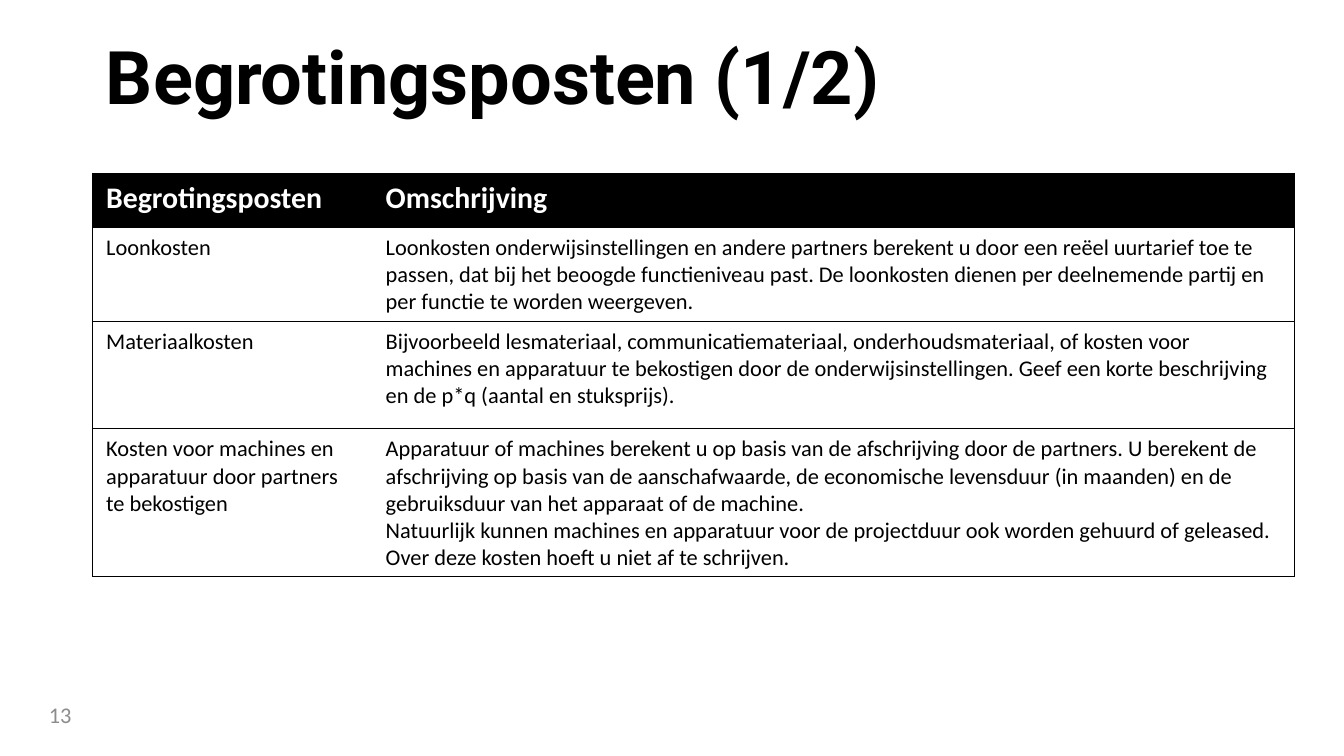
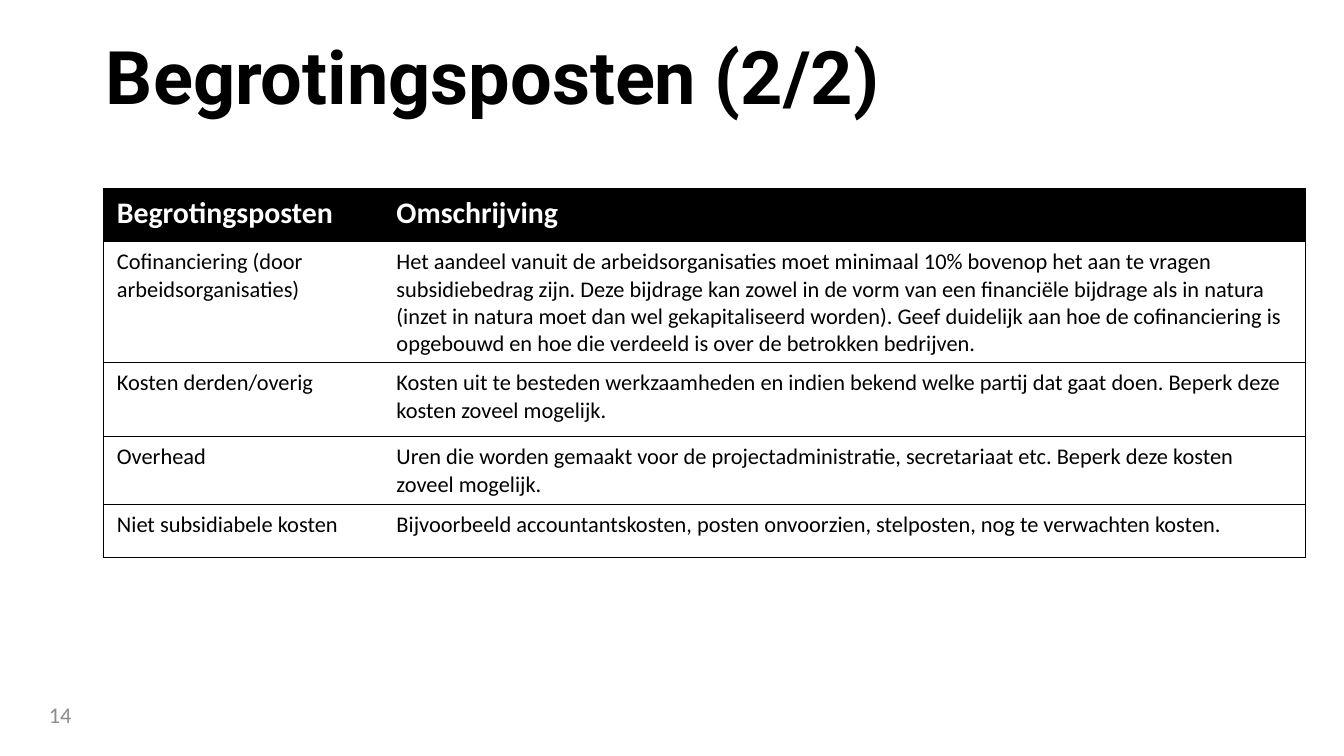
from lxml.etree import SubElement
from pptx import Presentation
from pptx.dml.color import RGBColor
from pptx.enum.text import MSO_ANCHOR, PP_ALIGN
from pptx.oxml.ns import qn
from pptx.util import Inches, Pt

BLACK = RGBColor(0x00, 0x00, 0x00)
WHITE = RGBColor(0xFF, 0xFF, 0xFF)
GREY = RGBColor(0x8C, 0x8C, 0x8C)
TITLE_FONT = "Roboto"
BODY_FONT = "Calibri"
PLAIN_TABLE_STYLE = "{2D5ABB26-0587-4C30-8999-92F81FD0307C}"
COLUMN_WIDTHS = (2.08, 6.86)
HEADER = ("Begrotingsposten", "Omschrijving")

PERSONNEL_AND_EQUIPMENT = [
    ("Loonkosten",
     "Loonkosten onderwijsinstellingen en andere partners berekent u door een reëel uurtarief toe te "
     "passen, dat bij het beoogde functieniveau past. De loonkosten dienen per deelnemende partij en "
     "per functie te worden weergeven."),
    ("Materiaalkosten",
     "Bijvoorbeeld lesmateriaal, communicatiemateriaal, onderhoudsmateriaal, of kosten voor "
     "machines en apparatuur te bekostigen door de onderwijsinstellingen. Geef een korte beschrijving "
     "en de p*q (aantal en stuksprijs)."),
    ("Kosten voor machines en apparatuur door partners te bekostigen",
     "Apparatuur of machines berekent u op basis van de afschrijving door de partners. U berekent de "
     "afschrijving op basis van de aanschafwaarde, de economische levensduur (in maanden) en de "
     "gebruiksduur van het apparaat of de machine.\n"
     "Natuurlijk kunnen machines en apparatuur voor de projectduur ook worden gehuurd of geleased. "
     "Over deze kosten hoeft u niet af te schrijven."),
]

COFINANCING_AND_OTHER = [
    ("Cofinanciering (door arbeidsorganisaties)",
     "Het aandeel vanuit de arbeidsorganisaties moet minimaal 10% bovenop het aan te vragen "
     "subsidiebedrag zijn. Deze bijdrage kan zowel in de vorm van een financiële bijdrage als in natura "
     "(inzet in natura moet dan wel gekapitaliseerd worden). Geef duidelijk aan hoe de cofinanciering is "
     "opgebouwd en hoe die verdeeld is over de betrokken bedrijven."),
    ("Kosten derden/overig",
     "Kosten uit te besteden werkzaamheden en indien bekend welke partij dat gaat doen. Beperk deze "
     "kosten zoveel mogelijk."),
    ("Overhead",
     "Uren die worden gemaakt voor de projectadministratie, secretariaat etc. Beperk deze kosten "
     "zoveel mogelijk."),
    ("Niet subsidiabele kosten",
     "Bijvoorbeeld accountantskosten, posten onvoorzien, stelposten, nog te verwachten kosten."),
]


def style_text(frame, font, size, color, bold=False):
    """Format every run of a text frame."""
    for paragraph in frame.paragraphs:
        for run in paragraph.runs:
            run.font.name = font
            run.font.size = Pt(size)
            run.font.bold = bold
            run.font.color.rgb = color


def add_text(slide, text, left, top, width, height):
    """Add a wrapped, vertically centred text box and return its frame."""
    frame = slide.shapes.add_textbox(
        Inches(left), Inches(top), Inches(width), Inches(height)).text_frame
    frame.word_wrap = True
    frame.vertical_anchor = MSO_ANCHOR.MIDDLE
    frame.text = text
    return frame


def add_title(slide, text):
    """Add the slide title."""
    title = add_text(slide, text, 0.69, 0.3, 8.62, 0.6)
    title.paragraphs[0].line_spacing = 0.9
    style_text(title, TITLE_FONT, 39.6, BLACK, bold=True)


def add_page_number(slide, number):
    """Add the page number at the bottom left."""
    page_number = add_text(slide, str(number), 0.12, 5.11, 0.51, 0.42)
    page_number.paragraphs[0].alignment = PP_ALIGN.RIGHT
    style_text(page_number, BODY_FONT, 12, GREY)


def set_borders(cell, visible_sides):
    """Draw thin black borders on the given sides and hide the others."""
    properties = cell._tc.get_or_add_tcPr()
    for side in "LRTB":
        border = SubElement(properties, qn(f"a:ln{side}"), w=str(Pt(0.5)))
        if side in visible_sides:
            fill = SubElement(border, qn("a:solidFill"))
            SubElement(fill, qn("a:srgbClr"), val=str(BLACK))
        else:
            SubElement(border, qn("a:noFill"))


def fill_cell(cell, text, is_header, outer_side):
    """Write and format one table cell."""
    cell.text_frame.text = text
    set_borders(cell, outer_side + "TB")
    if is_header:
        cell.fill.solid()
        cell.fill.fore_color.rgb = BLACK
        style_text(cell.text_frame, BODY_FONT, 16, WHITE, bold=True)
    else:
        cell.fill.background()
        style_text(cell.text_frame, BODY_FONT, 12, BLACK)


def add_budget_table(slide, items, left, top, height, row_heights):
    """Add a table of budget items below the shared header."""
    rows = [HEADER, *items]
    frame = slide.shapes.add_table(
        len(rows), len(HEADER), Inches(left), Inches(top),
        Inches(sum(COLUMN_WIDTHS)), Inches(height))
    budget = frame.table
    budget.horz_banding = False
    budget._tbl.tblPr.find(qn("a:tableStyleId")).text = PLAIN_TABLE_STYLE
    for column, width in zip(budget.columns, COLUMN_WIDTHS):
        column.width = Inches(width)
    for row, row_height in zip(budget.rows, row_heights):
        row.height = Inches(row_height)
    frame.height = Inches(height)
    for row_index, texts in enumerate(rows):
        for column_index, text in enumerate(texts):
            fill_cell(budget.cell(row_index, column_index), text,
                      row_index == 0, "LR"[column_index])


def main():
    """Build the two budget slides."""
    presentation = Presentation()
    presentation.slide_width = Inches(10)
    presentation.slide_height = presentation.slide_width * 9 // 16
    tables = [
        (PERSONNEL_AND_EQUIPMENT, 0.69, 1.29, 3, (0.4, 0.55, 0.8, 0.55)),
        (COFINANCING_AND_OTHER, 0.77, 1.4, 2.75, (0.4, 0.78, 0.55, 0.4, 0.4)),
    ]
    for part, table in enumerate(tables, start=1):
        slide = presentation.slides.add_slide(presentation.slide_layouts[6])
        add_title(slide, f"Begrotingsposten ({part}/{len(tables)})")
        add_budget_table(slide, *table)
        add_page_number(slide, 12 + part)
    presentation.save("out.pptx")


if __name__ == "__main__":
    main()
